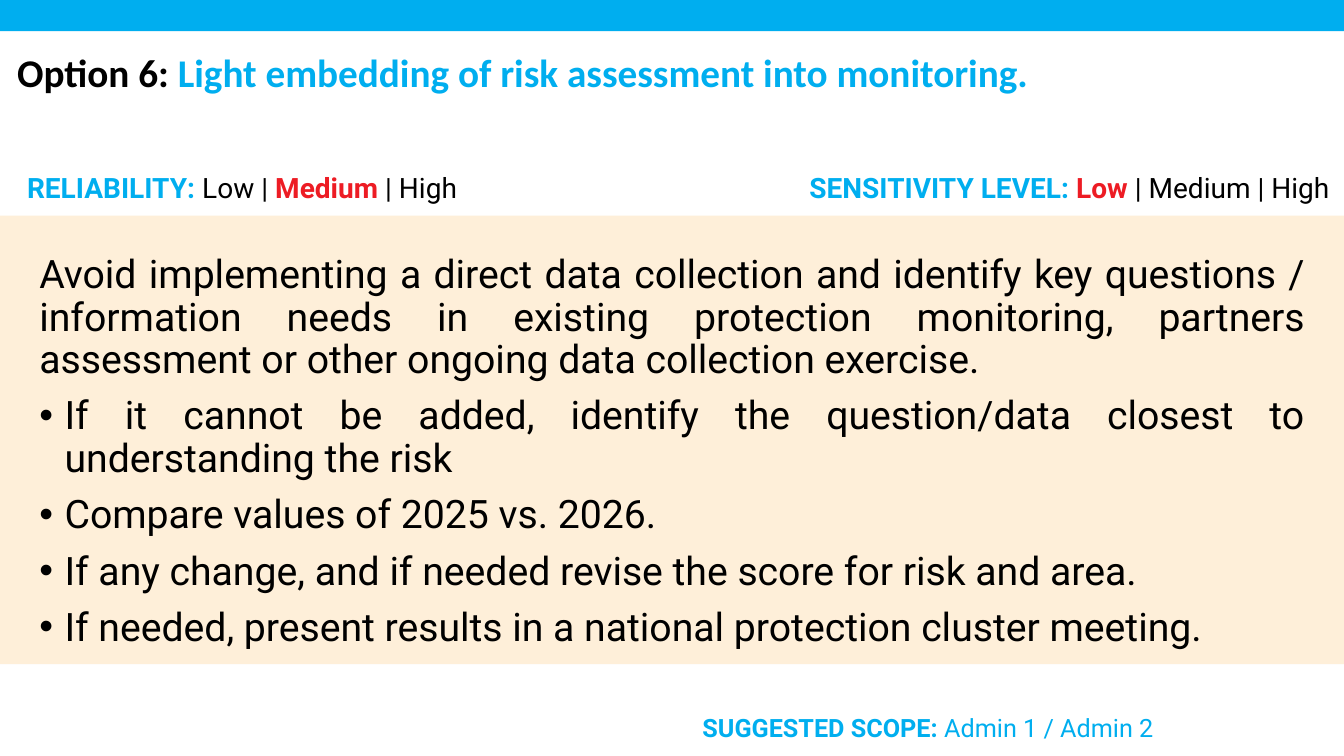
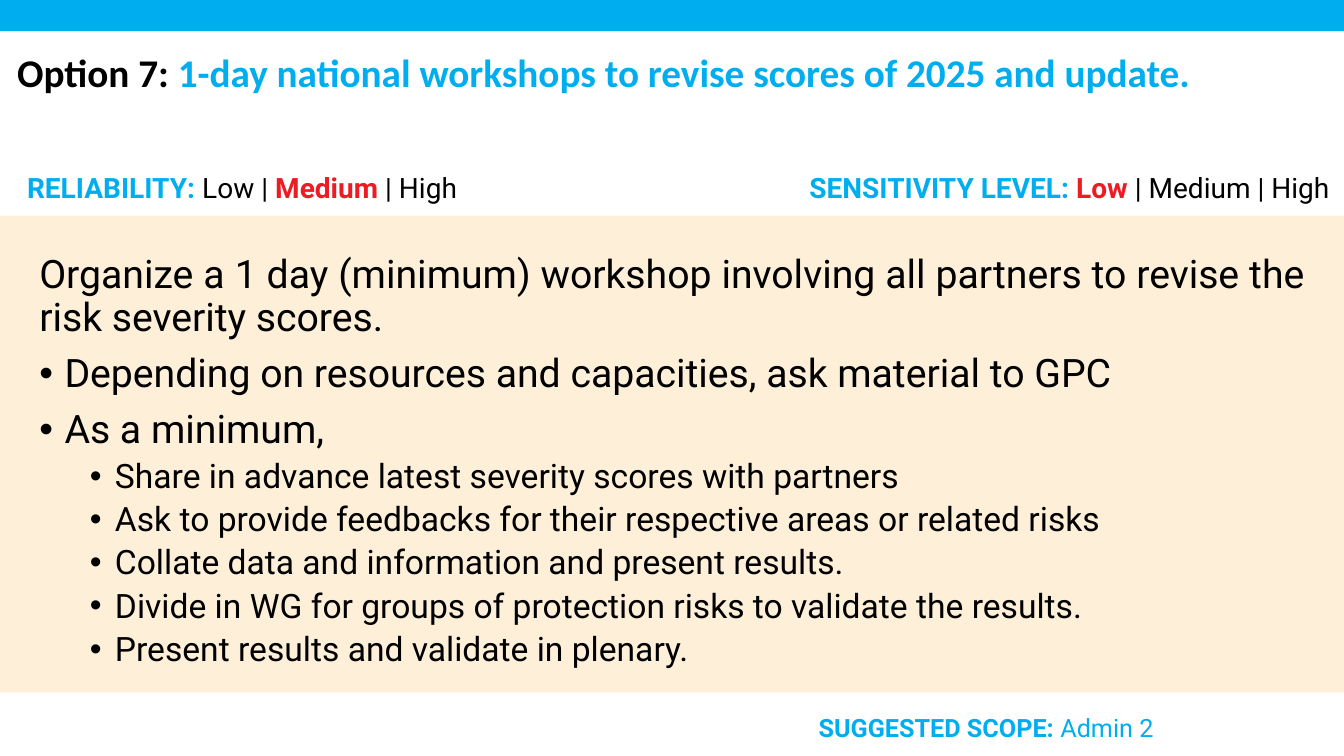
import dataclasses

import pptx
import pptx.dml.color
import pptx.enum.shapes
import pptx.enum.text
import pptx.oxml.ns
import pptx.util
from lxml import etree
from pptx.util import Inches

ALIGN = pptx.enum.text.PP_ALIGN


@dataclasses.dataclass(frozen=True)
class Theme:
    """Colours, fonts and type sizes shared by the slides."""

    blue: str = "00AEEF"
    red: str = "ED1C24"
    black: str = "000000"
    cream: str = "FEEFD9"
    title_font: str = "Calibri"
    text_font: str = "Roboto"
    title_size: int = 28
    body_sizes: tuple = (28, 24)
    body_gaps: tuple = (10, 5)
    rating_size: int = 20
    scope_size: int = 18


THEME = Theme()
LEVELS = ("Low", "Medium", "High")
BAND_BOX = (0, 0, 13.33, 0.31)
TITLE_BOX = (0.17, 0.43, 12.79, 0.57)
RELIABILITY_BOX = (0.17, 1.64, 4.63, 0.44)
SENSITIVITY_BOX = (7.93, 1.64, 5.4, 0.44)
SCOPE_BOX = (6.56, 7.02, 4.98, 0.4)
BODY_TOP = 2.14

OPTIONS = [
    {
        "number": 6,
        "title": "Light embedding of risk assessment into monitoring.",
        "reliability": "Medium",
        "sensitivity": "Low",
        "scope": "Admin 1 / Admin 2",
        "body_height": 4.45,
        "intro": "Avoid implementing a direct data collection and identify key questions / "
                 "information needs in existing protection monitoring, partners assessment "
                 "or other ongoing data collection exercise.",
        "bullets": [
            (0, "If it cannot be added, identify the question/data closest to understanding the risk"),
            (0, "Compare values of 2025 vs. 2026."),
            (0, "If any change, and if needed revise the score for risk and area."),
            (0, "If needed, present results in a national protection cluster meeting."),
        ],
    },
    {
        "number": 7,
        "title": "1-day national workshops to revise scores of 2025 and update.",
        "reliability": "Medium",
        "sensitivity": "Low",
        "scope": "Admin 2",
        "body_height": 4.73,
        "intro": "Organize a 1 day (minimum) workshop involving all partners to revise the "
                 "risk severity scores.",
        "bullets": [
            (0, "Depending on resources and capacities, ask material to GPC"),
            (0, "As a minimum,"),
            (1, "Share in advance latest severity scores with partners"),
            (1, "Ask to provide feedbacks for their respective areas or related risks"),
            (1, "Collate data and information and present results."),
            (1, "Divide in WG for groups of protection risks to validate the results."),
            (1, "Present results and validate in plenary."),
        ],
    },
]


def rgb(value):
    """Return the colour for a hexadecimal value."""
    return pptx.dml.color.RGBColor.from_string(value)


def place(shape, box):
    """Move and size a shape to a box in inches."""
    shape.left, shape.top, shape.width, shape.height = map(Inches, box)


def fill_solid(shape, color):
    """Give a shape a plain fill and no line."""
    shape.fill.solid()
    shape.fill.fore_color.rgb = rgb(color)
    shape.line.fill.background()


def set_frame(frame, insets=(0.1, 0.05, 0.1, 0.05)):
    """Wrap a text frame, anchor it at the top and set its insets."""
    frame.word_wrap = True
    frame.auto_size = pptx.enum.text.MSO_AUTO_SIZE.NONE
    frame.vertical_anchor = pptx.enum.text.MSO_ANCHOR.TOP
    (frame.margin_left, frame.margin_top,
     frame.margin_right, frame.margin_bottom) = map(Inches, insets)


def write_runs(paragraph, runs, font, size, align=ALIGN.LEFT):
    """Write (text, colour, bold) runs in one font and size."""
    paragraph.alignment = align
    paragraph.font.name = font
    paragraph.font.size = pptx.util.Pt(size)
    for text, color, bold in runs:
        run = paragraph.add_run()
        run.text = text
        run.font.color.rgb = rgb(color)
        run.font.bold = bold


def add_label(slide, box, runs, size, align=ALIGN.LEFT):
    """Add a one-line text box."""
    label = slide.shapes.add_textbox(*map(Inches, box))
    set_frame(label.text_frame)
    write_runs(label.text_frame.paragraphs[0], runs, THEME.text_font, size, align)


def add_band(slide, box):
    """Add the coloured band at the top."""
    band = slide.shapes.add_shape(
        pptx.enum.shapes.MSO_SHAPE.RECTANGLE, *map(Inches, box))
    band.shadow.inherit = False
    fill_solid(band, THEME.blue)


def add_title(slide, box, number, text):
    """Fill the title placeholder with the option number and name."""
    title = slide.shapes.title
    place(title, box)
    set_frame(title.text_frame, (0, 0.05, 0.1, 0.05))
    runs = [(f"Option {number}: ", THEME.black, True), (text, THEME.blue, True)]
    write_runs(title.text_frame.paragraphs[0], runs, THEME.title_font, THEME.title_size)


def add_rating(slide, box, name, chosen):
    """Add a scale of levels with the chosen one highlighted."""
    runs = [(f"{name}: ", THEME.blue, True)]
    for level in LEVELS:
        if level != LEVELS[0]:
            runs.append((" | ", THEME.black, False))
        is_chosen = level == chosen
        runs.append((level, THEME.red if is_chosen else THEME.black, is_chosen))
    add_label(slide, box, runs, THEME.rating_size)


def add_scope(slide, box, scope):
    """Add the suggested scope line."""
    runs = [("SUGGESTED SCOPE: ", THEME.blue, True), (scope, THEME.blue, False)]
    add_label(slide, box, runs, THEME.scope_size, ALIGN.RIGHT)


def set_bullet(paragraph, level=None):
    """Indent a paragraph with a bullet, or clear both when no level is given."""
    properties = paragraph._p.get_or_add_pPr()
    has_bullet = level is not None
    left, hanging = (0.25 + 0.5 * level, -0.25) if has_bullet else (0, 0)
    properties.set("marL", str(Inches(left)))
    properties.set("indent", str(Inches(hanging)))
    if has_bullet:
        font = etree.SubElement(properties, pptx.oxml.ns.qn("a:buFont"))
        font.set("typeface", "Arial")
        bullet = etree.SubElement(properties, pptx.oxml.ns.qn("a:buChar"))
        bullet.set("char", "•")
    else:
        etree.SubElement(properties, pptx.oxml.ns.qn("a:buNone"))


def write_body_paragraph(paragraph, text, level=None):
    """Write a justified body paragraph at a list level."""
    depth = level or 0
    paragraph.text = text
    paragraph.level = depth
    set_bullet(paragraph, level)
    paragraph.alignment = ALIGN.JUSTIFY
    paragraph.line_spacing = 0.9
    paragraph.space_before = pptx.util.Pt(0 if level is None else THEME.body_gaps[depth])
    paragraph.font.name = THEME.text_font
    paragraph.font.size = pptx.util.Pt(THEME.body_sizes[depth])
    paragraph.font.color.rgb = rgb(THEME.black)


def add_body(slide, box, intro, bullets):
    """Fill the body placeholder with an introduction and a list."""
    body = slide.placeholders[1]
    place(body, box)
    fill_solid(body, THEME.cream)
    frame = body.text_frame
    set_frame(frame, (0.39, 0.39, 0.39, 0.05))
    write_body_paragraph(frame.paragraphs[0], intro)
    for level, text in bullets:
        write_body_paragraph(frame.add_paragraph(), text, level)


def add_option_slide(presentation, option):
    """Add one option slide."""
    slide = presentation.slides.add_slide(presentation.slide_layouts[1])
    add_body(slide, (0, BODY_TOP, 13.33, option["body_height"]),
             option["intro"], option["bullets"])
    add_band(slide, BAND_BOX)
    add_title(slide, TITLE_BOX, option["number"], option["title"])
    add_rating(slide, RELIABILITY_BOX, "RELIABILITY", option["reliability"])
    add_rating(slide, SENSITIVITY_BOX, "SENSITIVITY LEVEL", option["sensitivity"])
    add_scope(slide, SCOPE_BOX, option["scope"])


def main():
    """Build and save the presentation."""
    presentation = pptx.Presentation()
    presentation.slide_width = Inches(13.33)
    presentation.slide_height = Inches(7.5)
    for option in OPTIONS:
        add_option_slide(presentation, option)
    presentation.save("out.pptx")


if __name__ == "__main__":
    main()
